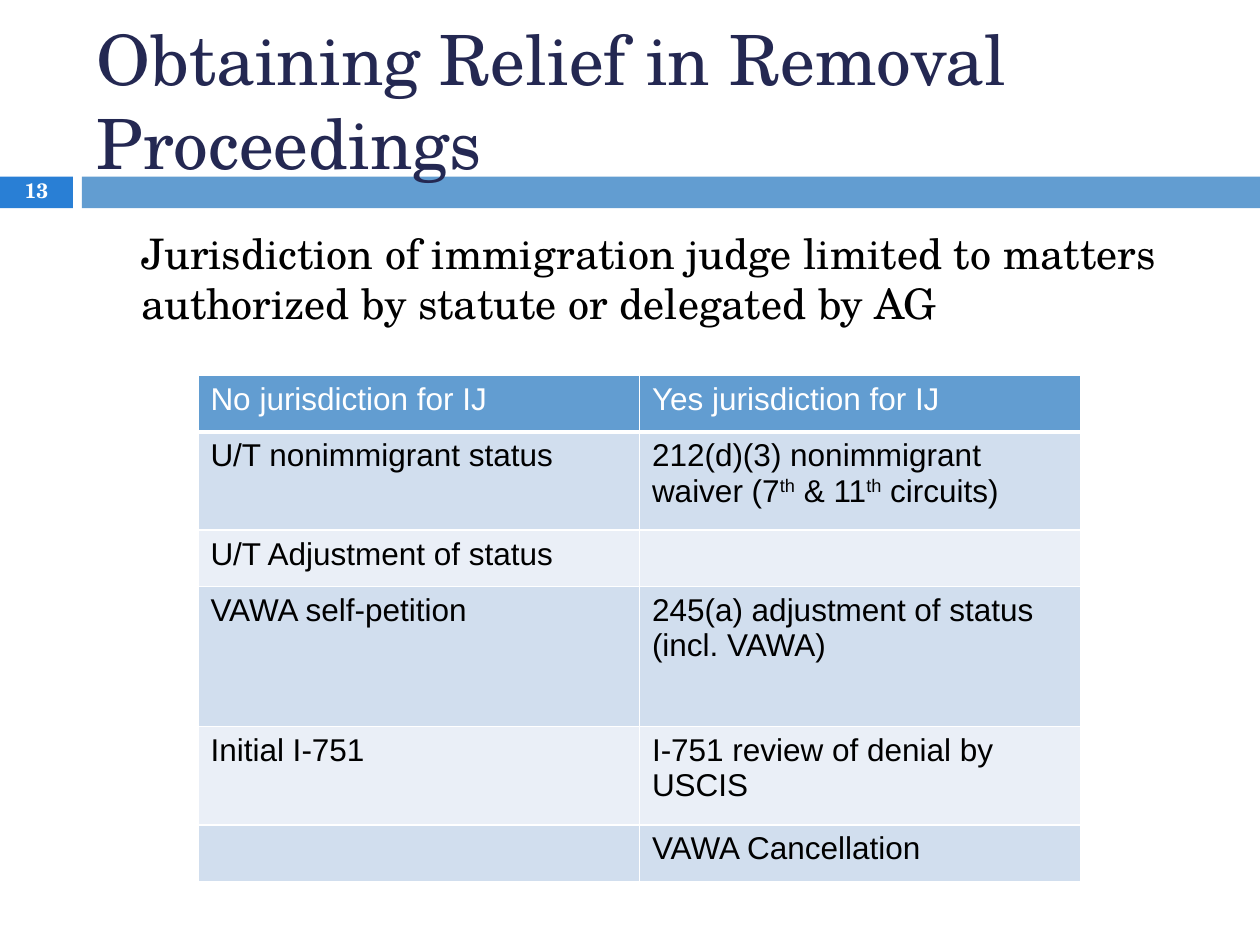
from collections import namedtuple

from lxml import etree
from pptx import Presentation
from pptx.dml.color import RGBColor
from pptx.enum.shapes import MSO_SHAPE
from pptx.enum.text import MSO_ANCHOR, MSO_AUTO_SIZE, PP_ALIGN
from pptx.oxml.ns import qn
from pptx.util import Cm, Pt

RECT = MSO_SHAPE.RECTANGLE
TOP, MIDDLE = MSO_ANCHOR.TOP, MSO_ANCHOR.MIDDLE
LEFT, CENTER = PP_ALIGN.LEFT, PP_ALIGN.CENTER
NO_AUTOFIT = MSO_AUTO_SIZE.NONE

NAVY = RGBColor(0x24, 0x28, 0x52)
BRIGHT_BLUE = RGBColor(0x29, 0x7F, 0xD5)
BLUE = RGBColor(0x62, 0x9D, 0xD1)
BAND_DARK = RGBColor(0xD1, 0xDE, 0xEE)
BAND_LIGHT = RGBColor(0xEA, 0xEF, 0xF7)
WHITE = RGBColor(0xFF, 0xFF, 0xFF)
BLACK = RGBColor(0, 0, 0)

SERIF, SANS = "TeX Gyre Schola", "Arial"

Box = namedtuple("Box", "x y w h")  # centimetres

PAGE = Box(0, 0, 25.4, 19.05)
TITLE = Box(1.7, 0.64, 22.66, 2.74)
BAR = Box(0, 3.56, PAGE.w, 0.64)
BODY = Box(1.7, 4.45, 22.66, 14.1)
TABLE = Box(3.99, 7.57, 17.8, 10.2)

ROWS = [
    (1.14, "No jurisdiction for IJ", "Yes jurisdiction for IJ"),
    (1.98, "U/T nonimmigrant status",
     "212(d)(3) nonimmigrant waiver (7^th^ & 11^th^ circuits)"),
    (1.14, "U/T Adjustment of status", ""),
    (2.82, "VAWA self-petition", "245(a) adjustment of status (incl. VAWA)"),
    (1.98, "Initial I-751", "I-751 review of denial by USCIS"),
    (1.14, "", "VAWA Cancellation"),
]


def write(tf, text, size, color, font=SERIF, bold=False, align=LEFT,
          anchor=TOP, spacing=1.0):
    """Fill the first paragraph; text between carets is superscript."""
    tf.word_wrap = True
    tf.vertical_anchor = anchor
    p = tf.paragraphs[0]
    p.alignment = align
    p.line_spacing = spacing
    p.space_before = Pt(0)
    for i, part in enumerate(text.split("^")):
        r = p.add_run()
        r.text = part
        r.font.name = font
        r.font.size = Pt(size)
        r.font.bold = bold
        r.font.color.rgb = color
        if i % 2:
            r.font._element.set("baseline", "30000")
    return p


def place(sp, box):
    sp.left, sp.top, sp.width, sp.height = (Cm(v) for v in box)


def add_bar(slide, box, number):
    """Band under the title with the slide number at its left end."""
    number_w, gap = 1.47, 0.18
    start = number_w + gap
    parts = [(Box(box.x, box.y, number_w, box.h), BRIGHT_BLUE),
             (Box(box.x + start, box.y, box.w - start, box.h), BLUE)]
    for i, (part, color) in enumerate(parts):
        sp = slide.shapes.add_shape(RECT, *(Cm(v) for v in part))
        sp.shadow.inherit = False
        sp.fill.solid()
        sp.fill.fore_color.rgb = color
        sp.line.fill.background()
        # The title's descenders overlap the band, so it goes to the back.
        slide.shapes._spTree.insert(2 + i, sp._element)
    label = slide.shapes.add_textbox(Cm(box.x), Cm(box.y), Cm(number_w), Cm(box.h))
    write(label.text_frame, number, 11.9, WHITE, bold=True, align=CENTER,
          anchor=MIDDLE, spacing=0.8)


def add_title(slide, box, text):
    sp = slide.shapes.title
    place(sp, box)
    sp.text_frame.auto_size = NO_AUTOFIT
    write(sp.text_frame, text, 39.6, NAVY, anchor=MIDDLE)


def add_body(slide, box, text):
    sp = slide.placeholders[1]
    place(sp, box)
    sp.text_frame.auto_size = NO_AUTOFIT
    pPr = write(sp.text_frame, text, 24, BLACK)._p.get_or_add_pPr()
    pPr.set("marL", str(Cm(0.89)))
    pPr.set("indent", "0")
    etree.SubElement(pPr, qn("a:buNone"))


def set_borders(cell, **widths):
    """Draw white borders before the cell's fill is set."""
    tcPr = cell._tc.get_or_add_tcPr()
    for side in ("L", "R", "T", "B"):
        ln = etree.SubElement(tcPr, qn(f"a:ln{side}"), w=str(Pt(widths.get(side, 1))))
        fill = etree.SubElement(ln, qn("a:solidFill"))
        etree.SubElement(fill, qn("a:srgbClr"), val=str(WHITE))


def add_jurisdiction_table(slide, box, rows):
    columns = len(rows[0]) - 1
    table = slide.shapes.add_table(len(rows), columns, *(Cm(v) for v in box)).table
    for column in table.columns:
        column.width = Cm(box.w / columns)
    for i, (height, *texts) in enumerate(rows):
        table.rows[i].height = Cm(height)
        band = BLUE if i == 0 else BAND_DARK if i % 2 else BAND_LIGHT
        for j, text in enumerate(texts):
            cell = table.cell(i, j)
            set_borders(cell, T=3 if i == 1 else 1, B=3 if i == 0 else 1)
            cell.fill.solid()
            cell.fill.fore_color.rgb = band
            if text:
                write(cell.text_frame, text, 18, BLACK if i else WHITE, font=SANS)


def main():
    prs = Presentation()
    prs.slide_width, prs.slide_height = Cm(PAGE.w), Cm(PAGE.h)
    slide = prs.slides.add_slide(prs.slide_layouts[1])
    add_title(slide, TITLE, "Obtaining Relief in Removal Proceedings")
    add_body(slide, BODY, "Jurisdiction of immigration judge limited to matters "
                          "authorized by statute or delegated by AG")
    add_bar(slide, BAR, "13")
    add_jurisdiction_table(slide, TABLE, ROWS)
    prs.save("out.pptx")


if __name__ == "__main__":
    main()
